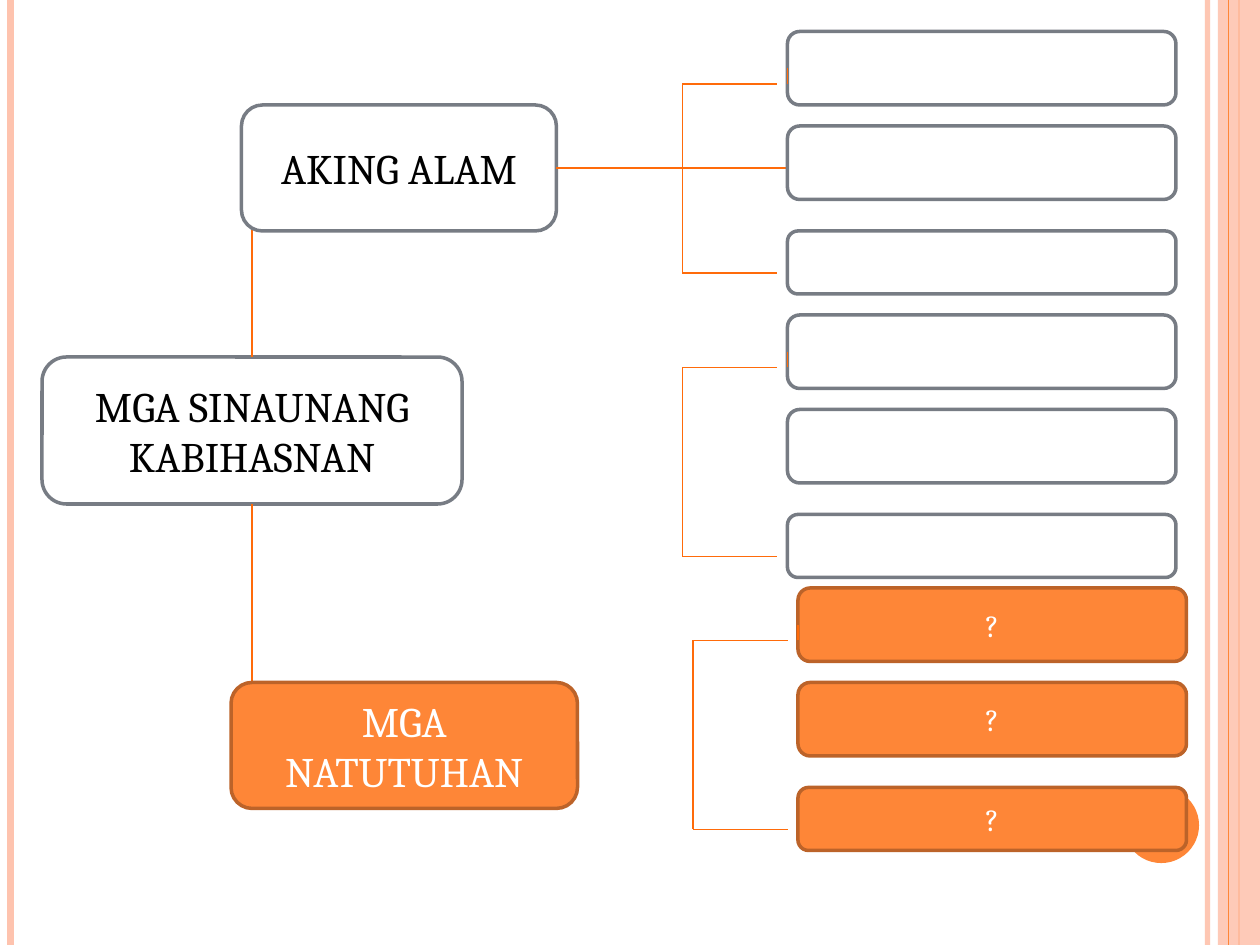
"""Build the concept map of ancient civilizations with three answer groups."""
import lxml.etree
import pptx
import pptx.dml.color
import pptx.enum.shapes
import pptx.enum.text
import pptx.oxml.ns
import pptx.util

RGB = pptx.dml.color.RGBColor
SHAPE = pptx.enum.shapes.MSO_SHAPE
ORANGE, RUST, PEACH = RGB(0xFE, 0x86, 0x37), RGB(0xBC, 0x63, 0x29), RGB(0xFE, 0xC3, 0xAE)
LINK, GRAY = RGB(0xFF, 0x6B, 0x0A), RGB(0x77, 0x7C, 0x84)
WHITE, BLACK = RGB(0xFF, 0xFF, 0xFF), RGB(0, 0, 0)

COLUMNS, ROWS = 120, 90
PLAIN = (WHITE, GRAY, BLACK)
FILLED = (ORANGE, RUST, WHITE)
TOPIC = ("MGA SINAUNANG KABIHASNAN", (4, 34, 40, 14), PLAIN)
KNOWN = ("AKING ALAM", (23, 10, 30, 12), PLAIN)
LEARNED = ("MGA NATUTUHAN", (22, 65, 33, 12), FILLED)
GROUPS = [("", 75, 3, PLAIN), ("", 75, 30, PLAIN), ("?", 76, 56, FILLED)]
ANSWER_ROWS = [(0, 7), (9, 7), (19, 6)]
ANSWER_WIDTH = 37
RULES = [(115, PEACH, 3, 93), (1, PEACH, 4.5, 100), (118, ORANGE, 1.5, 100)]
INNER_RULE = (117, ORANGE, 0.75, 100)

deck = pptx.Presentation()
deck.slide_width, deck.slide_height = pptx.util.Inches(10), pptx.util.Inches(7.5)
slide = deck.slides.add_slide(deck.slide_layouts[6])
CELL = deck.slide_width / COLUMNS


def grid(*cells):
    return [round(cell * CELL) for cell in cells]


def set_opacity(element, percent):
    color = next(element.iter(pptx.oxml.ns.qn("a:srgbClr")))
    lxml.etree.SubElement(color, pptx.oxml.ns.qn("a:alpha"), val=str(percent * 1000))


def add_line(start, end, color=LINK, weight=1):
    line = slide.shapes.add_connector(
        pptx.enum.shapes.MSO_CONNECTOR.STRAIGHT, *grid(*start, *end))
    line.line.color.rgb = color
    line.line.width = pptx.util.Pt(weight)
    properties = line._element.spPr
    lxml.etree.SubElement(properties, pptx.oxml.ns.qn("a:effectLst"))
    return line


def add_rule(column, color, weight, opacity):
    rule = add_line((column, 0), (column, ROWS), color, weight)
    if opacity < 100:
        set_opacity(rule._element, opacity)


def add_solid(preset, place, fill):
    solid = slide.shapes.add_shape(preset, *grid(*place))
    solid.shadow.inherit = False
    solid.fill.solid()
    solid.fill.fore_color.rgb = fill
    solid.line.fill.background()
    return solid


def add_box(text, place, style, size=24):
    fill, outline, ink = style
    box = add_solid(SHAPE.ROUNDED_RECTANGLE, place, fill)
    box.line.color.rgb = outline
    box.line.width = pptx.util.Pt(2)
    if text:
        box.text_frame.text = text
        box.text_frame.word_wrap = True
        box.text_frame.vertical_anchor = pptx.enum.text.MSO_ANCHOR.MIDDLE
        paragraph = box.text_frame.paragraphs[0]
        paragraph.alignment = pptx.enum.text.PP_ALIGN.CENTER
        paragraph.font.name = "Cambria"
        paragraph.font.size = pptx.util.Pt(size)
        paragraph.font.color.rgb = ink
    return box


def add_group(text, left, top, style):
    answers = [add_box(text, (left, top + offset, ANSWER_WIDTH, height), style, 18)
               for offset, height in ANSWER_ROWS]
    spine, tip, upper, lower = left - 10, left - 1, top + 5, top + 23
    add_line((spine, lower), (spine, upper))
    add_line((left, upper), (left, top + ANSWER_ROWS[0][1] / 2)).end_connect(answers[0], 1)
    for row in (upper, lower):
        add_line((spine, row), (tip, row))


for rule in RULES:
    add_rule(*rule)
band = add_solid(SHAPE.RECTANGLE, (116, 0, 4, ROWS), PEACH)
set_opacity(band._element, 87)
add_rule(*INNER_RULE)
add_solid(SHAPE.OVAL, (107, 75, 7.2, 7.2), ORANGE)

topic = add_box(*TOPIC)
add_line((24, 34), (24, 18)).begin_connect(topic, 0)
add_line((24, 48), (24, 68)).begin_connect(topic, 2)
known = add_box(*KNOWN)
add_line((53, 16), (77, 16)).begin_connect(known, 3)
for group in GROUPS:
    add_group(*group)
add_box(*LEARNED)

deck.save("out.pptx")
